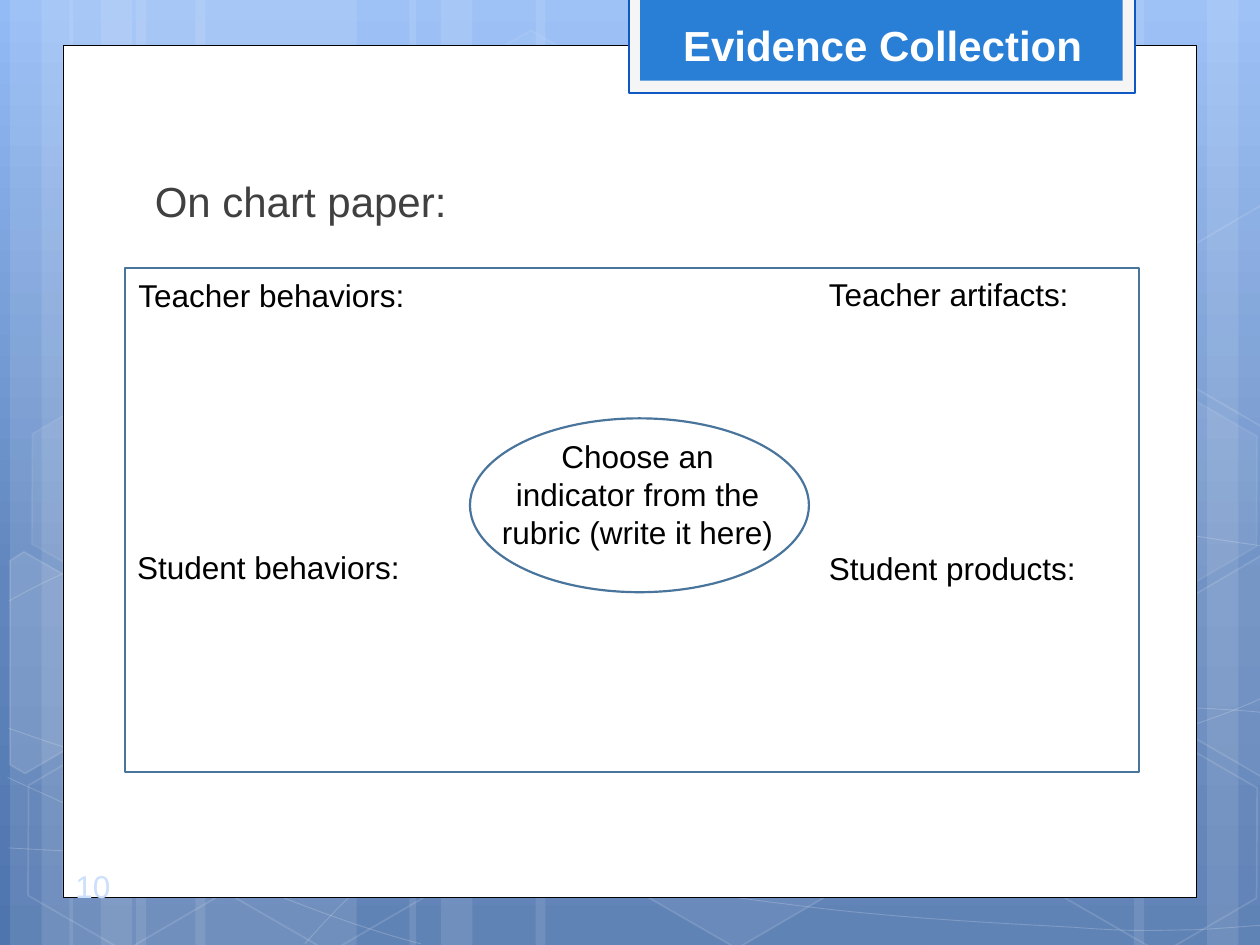
from copy import deepcopy

from lxml import etree
from pptx import Presentation
from pptx.dml.color import RGBColor
from pptx.enum.shapes import MSO_SHAPE
from pptx.enum.text import MSO_ANCHOR, PP_ALIGN
from pptx.oxml.ns import qn
from pptx.util import Inches, Pt

RECTANGLE, HEXAGON, OVAL = MSO_SHAPE.RECTANGLE, MSO_SHAPE.HEXAGON, MSO_SHAPE.OVAL
LEFT, CENTER = PP_ALIGN.LEFT, PP_ALIGN.CENTER
TOP, MIDDLE = MSO_ANCHOR.TOP, MSO_ANCHOR.MIDDLE

WHITE = RGBColor(0xFF, 0xFF, 0xFF)
BLACK = RGBColor(0, 0, 0)
GRAY = RGBColor(0x40, 0x40, 0x40)
PALE_GRAY = RGBColor(0xF5, 0xF5, 0xF5)
PALE_BLUE = RGBColor(0xCD, 0xE0, 0xFB)
TAB_BLUE = RGBColor(0x29, 0x7F, 0xD5)
TAB_EDGE = RGBColor(0x0E, 0x58, 0xC4)
CHART_EDGE = RGBColor(0x49, 0x74, 0x9B)
BACKGROUND_STOPS = [
    (0, RGBColor(0x93, 0xBB, 0xF6)),
    (0.62, RGBColor(0x61, 0x86, 0xBE)),
    (1, RGBColor(0x4F, 0x75, 0xAE)),
]

# Background stripes: left, width
STRIPES = [
    (1.08, 1.75), (0.08, 0.5), (0.33, 0.83), (1.55, 1.75), (0.55, 0.5), (0.8, 0.83),
    (7.33, 1.75), (9.58, 0.5), (9, 0.83), (4.25, 3.08), (3.25, 0.5), (3.5, 0.83),
]

# Background waves: start point, then Bezier segments of two controls and an end
WAVES = [
    [(0.07, 6.73),
     (0.61, 6.76), (1.15, 6.79), (1.9, 6.78), (2.65, 6.77), (3.58, 6.75), (4.58, 6.65),
     (5.58, 6.55), (7, 6.36), (7.92, 6.17), (8.83, 5.98), (9.77, 5.68), (10.07, 5.51)],
    [(0.07, 4.77),
     (0.36, 4.61), (0.65, 4.46), (1.21, 4.31), (1.78, 4.16), (2.59, 3.94), (3.47, 3.87),
     (4.36, 3.8), (5.44, 3.79), (6.54, 3.87), (7.64, 3.95), (9.47, 4.26), (10.07, 4.34)],
    [(0.06, 6.17), (1.27, 6.72), (2.47, 7.27), (3.34, 7.49)],
    [(0.07, 5.78),
     (0.38, 5.89), (0.7, 6), (1.28, 6.16), (1.86, 6.31), (2.73, 6.56), (3.57, 6.73),
     (4.4, 6.9), (5.45, 7.08), (6.28, 7.18), (7.11, 7.29), (8, 7.33), (8.53, 7.36),
     (9.05, 7.4), (9.19, 7.38), (9.45, 7.38), (9.71, 7.37), (9.89, 7.35), (10.07, 7.34)],
    [(2.42, 7.49),
     (2.6, 7.29), (2.78, 7.09), (3.02, 6.91), (3.26, 6.73), (3.6, 6.53), (3.88, 6.39),
     (4.16, 6.25), (4.33, 6.19), (4.7, 6.09), (5.06, 5.99), (5.73, 5.85), (6.08, 5.78),
     (6.44, 5.71), (6.49, 5.71), (6.8, 5.69), (7.11, 5.66), (7.6, 5.63), (7.94, 5.62),
     (8.29, 5.61), (8.86, 5.62), (8.86, 5.62), (9.08, 5.62), (9.31, 5.62), (9.53, 5.62),
     (9.71, 5.63), (9.88, 5.64), (9.97, 5.65), (10.06, 5.66), (10.03, 5.65), (10.06, 5.66)],
]

# Hexagons: left, top, fill opacity, line opacity (percent)
HEXAGONS = [
    (3.34, 0.36, 4, 8), (4.97, 5.89, 6, 12), (0.11, 5.91, 0, 12), (0.14, 3.12, 7, 8),
    (1.74, 5.92, 0, 12), (7.53, 4.53, 10, 12), (8.34, 5.93, 0, 12), (8.34, 3.14, 7, 8),
]

# Hexagons cut by the slide edge: fill opacity, corners
CUT_HEXAGONS = [
    (10, [(0.08, 4.45), (0.19, 4.38), (0.96, 4.82), (0.95, 5.7), (0.2, 6.14), (0.08, 6.07)]),
    (4, [(9.26, 4.85), (10.01, 4.41), (10.09, 4.46), (10.09, 6.13), (10.02, 6.17), (9.26, 5.73)]),
    (0, [(9.26, 2.07), (10.01, 1.63), (10.1, 1.68), (10.09, 3.35), (10.02, 3.39), (9.26, 2.95)]),
]

# Solid parts: kind, box, fill, line colour, line width
PANELS = [
    (RECTANGLE, (0.5, 0.36, 9, 6.76), WHITE, BLACK, 0.5),
    (RECTANGLE, (4.99, -0.02, 4.02, 0.76), PALE_GRAY, TAB_EDGE, 1.25),
    (RECTANGLE, (5.08, -0.04, 3.83, 0.68), TAB_BLUE, None, 0),
    (RECTANGLE, (0.99, 2.13, 8.05, 4), WHITE, CHART_EDGE, 1.25),
    (OVAL, (3.73, 3.32, 2.69, 1.38), WHITE, CHART_EDGE, 1.25),
]

# Texts: wording, box, size, colour, bold, alignment, anchor
TEXTS = [
    ("10", (0.5, 6.83, 4.42, 0.5), 18, PALE_BLUE, False, LEFT, TOP),
    ("Evidence Collection", (5.08, 0.09, 3.85, 0.53), 24, WHITE, True, CENTER, MIDDLE),
    ("On chart paper:", (1.13, 1.34, 8.22, 0.84), 24, GRAY, False, LEFT, TOP),
    ("Choose an indicator from the rubric (write it here)",
     (3.87, 3.42, 2.38, 1.01), 18, BLACK, False, CENTER, TOP),
    ("Teacher behaviors:", (1, 2.14, 2.56, 0.4), 18, BLACK, False, LEFT, TOP),
    ("Student behaviors:", (0.99, 4.3, 2.56, 0.4), 18, BLACK, False, LEFT, TOP),
    ("Teacher artifacts:", (6.48, 2.13, 2.56, 0.4), 18, BLACK, False, LEFT, TOP),
    ("Student products:", (6.48, 4.31, 2.56, 0.4), 18, BLACK, False, LEFT, TOP),
]


def set_color(fill, color, opacity):
    """Fill with a colour at an opacity in percent; 0 means no fill."""
    if color is None or opacity == 0:
        fill.background()
        return
    fill.solid()
    fill.fore_color.rgb = color
    if opacity < 100:
        color_element = fill._xPr.find(qn("a:solidFill"))[0]
        etree.SubElement(color_element, qn("a:alpha"), val=str(opacity * 1000))


def style(shape, fill=WHITE, fill_opacity=100, line=WHITE, line_opacity=100, width=1):
    shape.shadow.inherit = False
    set_color(shape.fill, fill, fill_opacity)
    set_color(shape.line.fill, line, line_opacity)
    if line is not None and line_opacity:
        shape.line.width = Pt(width)


def add_shape(shapes, kind, box):
    return shapes.add_shape(kind, *map(Inches, box))


def add_outline(shapes, points, close):
    points = [(Inches(x), Inches(y)) for x, y in points]
    builder = shapes.build_freeform(*points[0])
    builder.add_line_segments(points[1:], close=close)
    return builder.convert_to_shape()


def add_wave(shapes, points):
    """Draw the points as an outline, then join each three into a Bezier segment."""
    wave = add_outline(shapes, points, False)
    lines = list(wave._element.iter(qn("a:lnTo")))
    for index in range(0, len(lines), 3):
        first, *others = lines[index:index + 3]
        curve = etree.Element(qn("a:cubicBezTo"))
        first.addprevious(curve)
        for line in (first, *others):
            curve.append(line[0])
            line.getparent().remove(line)
    return wave


def add_text(wording, box, size, color, bold, alignment, anchor):
    frame = slide.shapes.add_textbox(*map(Inches, box)).text_frame
    frame.word_wrap = True
    frame.vertical_anchor = anchor
    paragraph = frame.paragraphs[0]
    paragraph.alignment = alignment
    run = paragraph.add_run()
    run.text = wording
    for name, value in {"name": "Arial", "size": Pt(size), "bold": bold}.items():
        setattr(run.font, name, value)
    run.font.color.rgb = color


presentation = Presentation()
presentation.slide_width, presentation.slide_height = Inches(10), Inches(7.5)
slide = presentation.slides.add_slide(presentation.slide_layouts[6])

# Background gradient, from top to bottom
background = slide.background.fill
background.gradient()
background.gradient_angle = 270
stop_list = background._xPr.find(qn("a:gradFill")).find(qn("a:gsLst"))
stop_list.append(deepcopy(stop_list[0]))
for stop, (position, color) in zip(background.gradient_stops, BACKGROUND_STOPS):
    stop.position = position
    stop.color.rgb = color

# Translucent decoration
decoration = slide.shapes.add_group_shape().shapes
for left, width in STRIPES:
    style(add_shape(decoration, RECTANGLE, (left, 0, width, 7.5)), fill_opacity=10, line=None)
for points in WAVES:
    style(add_wave(decoration, points), fill=None, line_opacity=20, width=0.5)
for left, top, fill_opacity, line_opacity in HEXAGONS:
    hexagon = add_shape(decoration, HEXAGON, (left, top, 1.75, 1.52))
    hexagon.rotation = 30
    hexagon.adjustments[0] = 0.285
    style(hexagon, fill_opacity=fill_opacity, line_opacity=line_opacity)
for fill_opacity, corners in CUT_HEXAGONS:
    style(add_outline(decoration, corners, True), fill_opacity=fill_opacity, line_opacity=12)

# Page, title tab, chart paper and its centre
for kind, box, fill, line, width in PANELS:
    style(add_shape(slide.shapes, kind, box), fill=fill, line=line, width=width)

for text in TEXTS:
    add_text(*text)

presentation.save("out.pptx")
